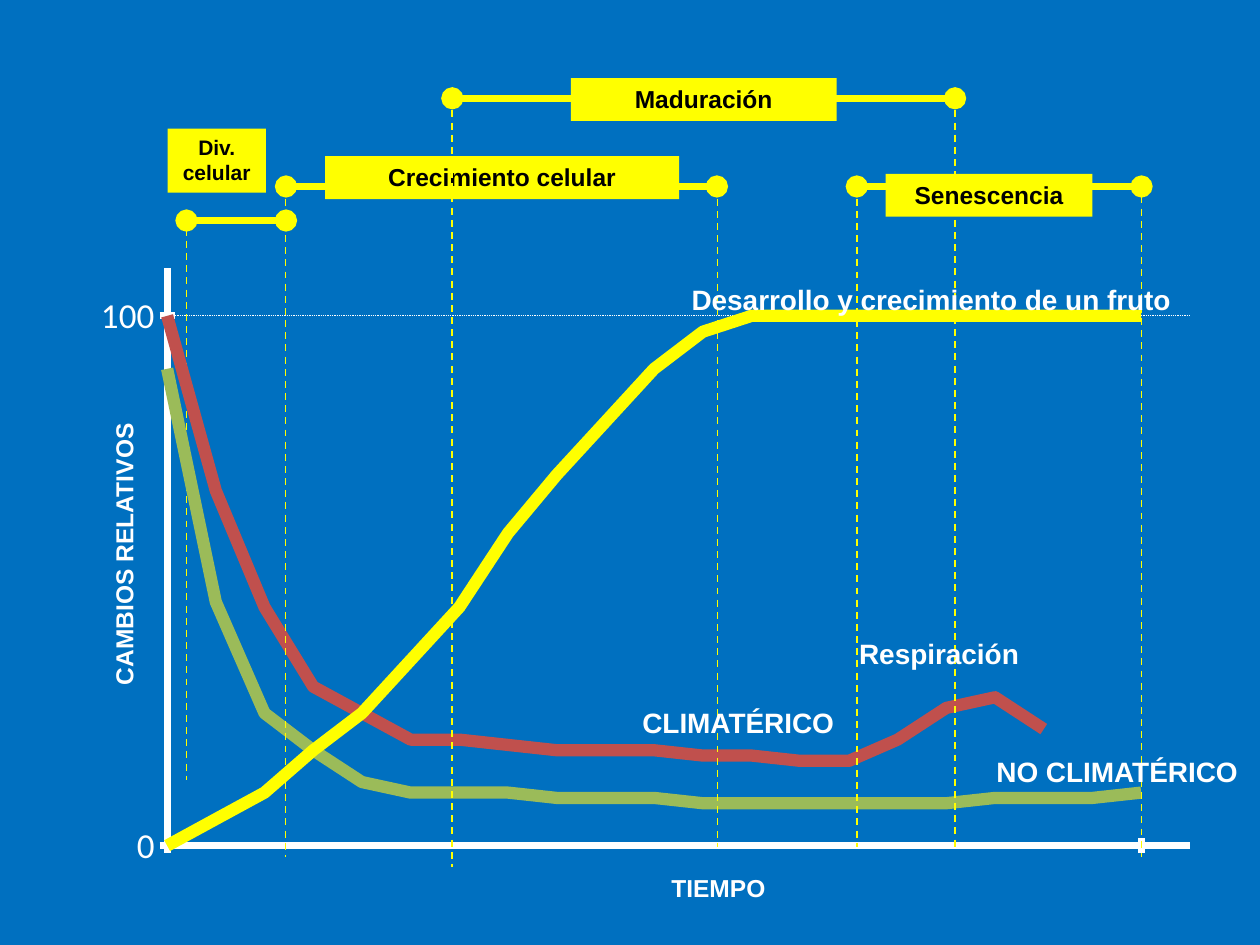
from lxml.etree import SubElement
from pptx import Presentation
from pptx.chart.data import XyChartData
from pptx.dml.color import RGBColor
from pptx.enum.chart import XL_CHART_TYPE as ChartType, XL_TICK_LABEL_POSITION as LabelPos, XL_TICK_MARK as Tick
from pptx.enum.dml import MSO_LINE_DASH_STYLE as Dash
from pptx.enum.shapes import MSO_CONNECTOR, MSO_SHAPE
from pptx.enum.text import MSO_ANCHOR, MSO_AUTO_SIZE, PP_ALIGN
from pptx.oxml import parse_xml
from pptx.oxml.ns import nsdecls, qn
from pptx.util import Inches, Pt

# The slide is a grid of 100 columns by 75 rows
COLUMNS, ROWS = 100, 75
CELL = Inches(0.1)
BLUE, YELLOW, WHITE, BLACK = "0070C0", "FFFF00", "FFFFFF", "000000"

# Phases: name, bar start, bar end, bar row, label box, text size
PHASES = [
    ("Maduración", 35.9, 75.8, 7.8, (45.3, 6.2, 21.1, 3.4), 14),
    ("Crecimiento celular", 22.7, 56.9, 14.8, (25.8, 12.4, 28.1, 3.4), 14),
    ("Senescencia", 68, 90.6, 14.8, (70.3, 13.8, 16.4, 3.4), 14),
    ("Div. celular", 14.8, 22.7, 17.5, (13.3, 10.2, 7.8, 5.1), 12),
]
# Phase limits: column, top row, bottom row
FIRST_LIMIT = (14.8, 17.2, 61.9)
LIMITS = [(22.65, 14.8, 68), (35.9, 7.8, 68.8), (56.95, 14.8, 67.2),
          (68, 14.8, 67.2), (75.8, 7.8, 67.2), (90.6, 15.6, 68)]
# Curves: name, colour, value at every fifth time step
CURVES = [
    ("Desarrollo", YELLOW, [0, 5, 10, 18, 25, 35, 45, 59, 70, 80, 90, 97] + [100] * 9),
    ("Climatérico", "C0504D", [100, 67, 45, 30, 25, 20, 20, 19, 18, 18, 18, 17, 17,
                               16, 16, 20, 26, 28, 22]),
    ("No climatérico", "9BBB59", [90, 46, 25, 18, 12, 10, 10, 10, 9, 9, 9, 8, 8, 8, 8,
                                  8, 8, 9, 9, 9, 10]),
]
# Captions: text, box, size, wraps, rotation
CAPTIONS = [
    ("Desarrollo y crecimiento de un fruto", (53.9, 21.9, 42.2, 3.7), 16, True, 0),
    ("Respiración", (67.2, 50, 17.1, 3.7), 16, True, 0),
    ("CLIMATÉRICO", (50, 55.5, 20.3, 3.7), 16, True, 0),
    ("NO CLIMATÉRICO", (78.1, 59.4, 25, 3.7), 16, True, 0),
    ("CAMBIOS RELATIVOS", (-1.6, 42.2, 22.9, 3.4), 14, False, 270),
    ("TIEMPO", (52.3, 68.8, 9.5, 3.4), 14, False, 0),
]


def rgb(value):
    return RGBColor.from_string(value)


def grid(*lengths):
    return [round(length * CELL) for length in lengths]


def set_attributes(target, values):
    for name, value in values.items():
        setattr(target, name, value)


def style_line(line, color, width, dash=None):
    line.color.rgb = rgb(color)
    line.width = Pt(width)
    if dash:
        line.dash_style = dash


def add_line(slide, ends, width, dash=None, dots=False):
    line = slide.shapes.add_connector(MSO_CONNECTOR.STRAIGHT, *grid(*ends))
    style_line(line.line, YELLOW, width, dash)
    properties = line._element.spPr
    if dots:
        outline = properties.find(qn("a:ln"))
        for end in ("a:headEnd", "a:tailEnd"):
            SubElement(outline, qn(end), type="oval")
    SubElement(properties, qn("a:effectLst"))


def add_limit(slide, column, top, bottom):
    add_line(slide, (column, top, column, bottom), 1, Dash.DASH)


def write(shape, text, size, color, align, wrap=True):
    frame = shape.text_frame
    set_attributes(frame, {"text": text, "word_wrap": wrap,
                           "auto_size": MSO_AUTO_SIZE.SHAPE_TO_FIT_TEXT,
                           "vertical_anchor": MSO_ANCHOR.TOP})
    paragraph = frame.paragraphs[0]
    paragraph.alignment = align
    set_attributes(paragraph.font, {"name": "Arial", "size": Pt(size), "bold": True})
    paragraph.font.color.rgb = rgb(color)


def add_phase(slide, name, start, end, row, box, size):
    add_line(slide, (start, row, end, row), 4.25, dots=True)
    label = slide.shapes.add_shape(MSO_SHAPE.RECTANGLE, *grid(*box))
    label.shadow.inherit = False
    label.fill.solid()
    label.fill.fore_color.rgb = rgb(YELLOW)
    label.line.fill.background()
    write(label, name, size, BLACK, PP_ALIGN.CENTER)


def add_caption(slide, text, box, size, wrap, rotation):
    caption = slide.shapes.add_textbox(*grid(*box))
    caption.rotation = rotation
    write(caption, text, size, WHITE, PP_ALIGN.LEFT, wrap)


def style_axis(axis, maximum):
    set_attributes(axis, {"minimum_scale": 0, "maximum_scale": maximum, "major_unit": 100,
                          "major_tick_mark": Tick.CROSS, "minor_tick_mark": Tick.NONE,
                          "has_major_gridlines": False})
    style_line(axis.format.line, WHITE, 4)
    set_attributes(axis.tick_labels.font, {"name": "Calibri", "size": Pt(20)})
    axis.tick_labels.font.color.rgb = rgb(WHITE)


def add_curves(slide):
    data = XyChartData()
    for name, _, values in CURVES:
        series = data.add_series(name)
        for step, value in enumerate(values):
            series.add_data_point(step * 5, value)
    chart = slide.shapes.add_chart(ChartType.XY_SCATTER_SMOOTH_NO_MARKERS,
                                   *grid(6.2, 20.3, 90, 49.5), data).chart
    set_attributes(chart, {"has_legend": False, "has_title": False})
    set_attributes(chart.font, {"name": "Calibri", "size": Pt(10)})
    plot = chart.plots[0]
    plot.vary_by_categories = False
    for series, (_, color, _) in zip(plot.series, CURVES):
        series.smooth = True
        style_line(series.format.line, color, 7)

    time, change = chart.category_axis, chart.value_axis
    style_axis(time, 105)
    time.tick_label_position = LabelPos.NONE
    style_axis(change, 109)
    change.has_major_gridlines = True
    style_line(change.major_gridlines.format.line, WHITE, 0.5, Dash.ROUND_DOT)

    # Fixed inner plot area, so that time steps meet the phase limits
    area = chart._chartSpace.chart.plotArea
    for layout in area.findall(qn("c:layout")):
        area.remove(layout)
    shares = {"x": 0.08, "y": 0.02, "w": 0.9, "h": 0.93}
    shares.update(x=0.0785, w=0.902, h=0.926)
    sizes = "".join(f'<c:{side} val="{share}"/>' for side, share in shares.items())
    area.insert(0, parse_xml(
        f'<c:layout {nsdecls("c")}><c:manualLayout><c:layoutTarget val="inner"/>'
        f'<c:xMode val="edge"/><c:yMode val="edge"/>{sizes}</c:manualLayout></c:layout>'))


def main():
    deck = Presentation()
    deck.slide_width, deck.slide_height = grid(COLUMNS, ROWS)
    slide = deck.slides.add_slide(deck.slide_layouts[6])
    slide.background.fill.solid()
    slide.background.fill.fore_color.rgb = rgb(BLUE)

    # Curves, over the first limit
    add_limit(slide, *FIRST_LIMIT)
    add_curves(slide)

    # Limits cross the upper phases and run behind the later ones
    for phase in PHASES[:2]:
        add_phase(slide, *phase)
    for limit in LIMITS:
        add_limit(slide, *limit)
    for phase in PHASES[2:]:
        add_phase(slide, *phase)

    # Captions
    for caption in CAPTIONS:
        add_caption(slide, *caption)
    deck.save("out.pptx")


if __name__ == "__main__":
    main()
